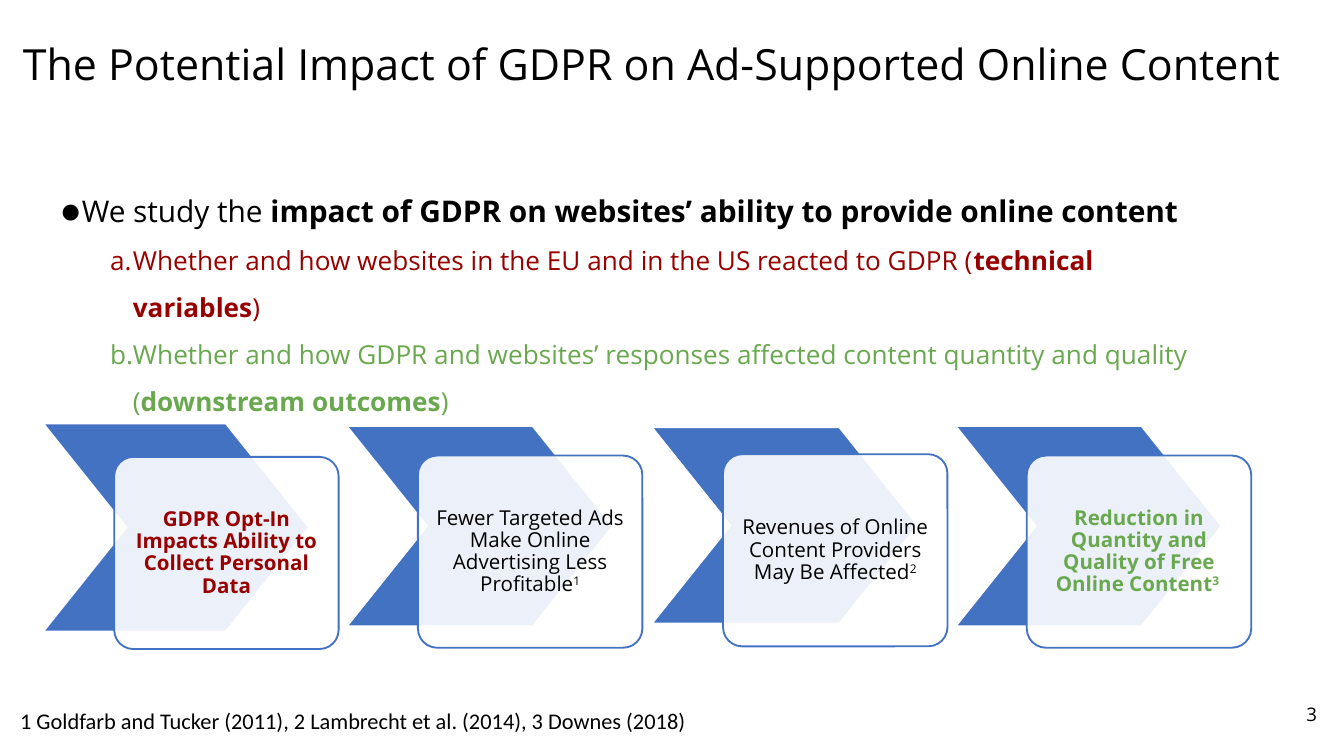
from lxml.etree import SubElement
from pptx import Presentation
from pptx.dml.color import RGBColor
from pptx.enum.shapes import MSO_SHAPE
from pptx.enum.text import MSO_ANCHOR, PP_ALIGN
from pptx.oxml.ns import qn
from pptx.util import Inches, Pt

COLORS = {
    "black": "000000",
    "white": "FFFFFF",
    "blue": "4372C3",
    "red": "980000",
    "green": "6AA84F",
}


def color(name):
    return RGBColor.from_string(COLORS[name])


def add_text_box(page, left, top, width, height, insets=(0.07, 0.04), anchor=MSO_ANCHOR.TOP):
    box = page.shapes.add_textbox(Inches(left), Inches(top), Inches(width), Inches(height))
    frame = box.text_frame
    frame.word_wrap = True
    frame.vertical_anchor = anchor
    frame.margin_left = frame.margin_right = Inches(insets[0])
    frame.margin_top = frame.margin_bottom = Inches(insets[1])
    return frame


def add_span(para, text, size, tint="black", bold=False, font="Open Sans", raised=False):
    span = para.add_run()
    span.text = text
    span.font.name = font
    span.font.size = Pt(size)
    span.font.bold = bold
    span.font.color.rgb = color(tint)
    if raised:
        span._r.get_or_add_rPr().set("baseline", "30000")


def set_bullet(para, tint, margin, hanging, scale, kind, **settings):
    properties = para._p.get_or_add_pPr()
    properties.set("marL", str(Inches(margin)))
    properties.set("indent", str(-Inches(hanging)))
    bullet_color = SubElement(properties, qn("a:buClr"))
    SubElement(bullet_color, qn("a:srgbClr"), val=COLORS[tint])
    SubElement(properties, qn("a:buSzPct"), val=str(scale * 1000))
    SubElement(properties, qn("a:buFont"), typeface="Open Sans")
    SubElement(properties, qn(kind), **settings)


def add_title(page, left, top, width, height):
    frame = add_text_box(page, left, top, width, height, anchor=MSO_ANCHOR.MIDDLE)
    para = frame.paragraphs[0]
    para.line_spacing = 0.9
    add_span(para, "The Potential Impact of GDPR on Ad-Supported Online Content", 23)


def add_panel(page, preset, left, top, width, height, adjustment, fill, line):
    panel = page.shapes.add_shape(
        preset, Inches(left), Inches(top), Inches(width), Inches(height))
    panel.shadow.inherit = False
    panel.adjustments[0] = adjustment
    panel.fill.solid()
    panel.fill.fore_color.rgb = color(fill)
    panel.line.color.rgb = color(line)
    panel.line.width = Pt(1)
    return panel


def add_step(page, left, top, chevron_height, card_top, text, note, tint, bold):
    # Chevron behind
    add_panel(page, MSO_SHAPE.CHEVRON, left, top, 1.98, chevron_height, 0.4, "blue", "white")

    # Translucent card in front
    card_left = left + 0.53
    card = add_panel(page, MSO_SHAPE.ROUNDED_RECTANGLE, card_left, card_top,
                     1.67, 1.43, 0.1, "white", "blue")
    fill_color = card.fill._xPr.find(qn("a:solidFill")).find(qn("a:srgbClr"))
    SubElement(fill_color, qn("a:alpha"), val="90000")

    # Label with its footnote mark
    frame = add_text_box(page, card_left + 0.04, card_top + 0.04, 1.59, 1.35,
                         (0.08, 0.08), MSO_ANCHOR.MIDDLE)
    para = frame.paragraphs[0]
    para.alignment = PP_ALIGN.CENTER
    para.line_spacing = 0.9
    add_span(para, text, 11, tint, bold)
    if note:
        add_span(para, note, 11, tint, bold, raised=True)


def add_process(page, left):
    pitch = 2.263
    # Chevron top, chevron height, card top, text, footnote, colour, bold
    steps = [
        (3.15, 1.55, 3.40, "GDPR Opt-In Impacts Ability to Collect Personal Data",
         "", "red", True),
        (3.17, 1.49, 3.39, "Fewer Targeted Ads Make Online Advertising Less Profitable",
         "1", "black", False),
        (3.18, 1.46, 3.38, "Revenues of Online Content Providers May Be Affected",
         "2", "black", False),
        (3.17, 1.49, 3.39, "Reduction in Quantity and Quality of Free Online Content",
         "3 ", "green", True),
    ]
    for index, step in enumerate(steps):
        add_step(page, round(left + index * pitch, 2), *step)


def add_footer(page, top):
    sources = add_text_box(page, 0.08, top + 0.12, 5.83, 0.28)
    add_span(sources.paragraphs[0],
             "1 Goldfarb and Tucker (2011), 2 Lambrecht et al. (2014), 3 Downes (2018)",
             12, font="Calibri")
    number = add_text_box(page, 9.27, top, 0.6, 0.43, anchor=MSO_ANCHOR.MIDDLE)
    number.paragraphs[0].alignment = PP_ALIGN.RIGHT
    add_span(number.paragraphs[0], "3", 10)


def add_questions(page, left, top, width, height):
    frame = add_text_box(page, left, top, width, height, (0.1, 0.1))

    # Main point
    para = frame.paragraphs[0]
    para.line_spacing = 1.5
    set_bullet(para, "black", 0.19, 0.15, 70, "a:buChar", char="●")
    add_span(para, "We study the", 16)
    add_span(para, " impact of GDPR on websites’ ability to provide online content", 16, bold=True)

    # Lettered questions
    questions = [
        ("Whether and how websites in the EU and in the US reacted to GDPR (",
         "technical variables", "red"),
        ("Whether and how GDPR and websites’ responses affected content quantity and quality (",
         "downstream outcomes", "green"),
    ]
    for text, emphasis, tint in questions:
        para = frame.add_paragraph()
        para.level = 1
        para.line_spacing = 1.5
        set_bullet(para, tint, 0.57, 0.17, 100, "a:buAutoNum", type="alphaLcPeriod")
        add_span(para, text, 14, tint)
        add_span(para, emphasis, 14, tint, bold=True)
        add_span(para, ")", 14, tint)


def main():
    deck = Presentation()
    # Widescreen 16:9
    deck.slide_width = Inches(10)
    deck.slide_height = Inches(10) * 9 // 16
    page = deck.slides.add_slide(deck.slide_layouts[6])
    add_title(page, 0.1, 0.1, 9.77, 0.79)
    add_process(page, 0.32)
    add_footer(page, 5.1)
    add_questions(page, 0.32, 1.2, 8.88, 1.9)
    deck.save("out.pptx")


if __name__ == "__main__":
    main()
